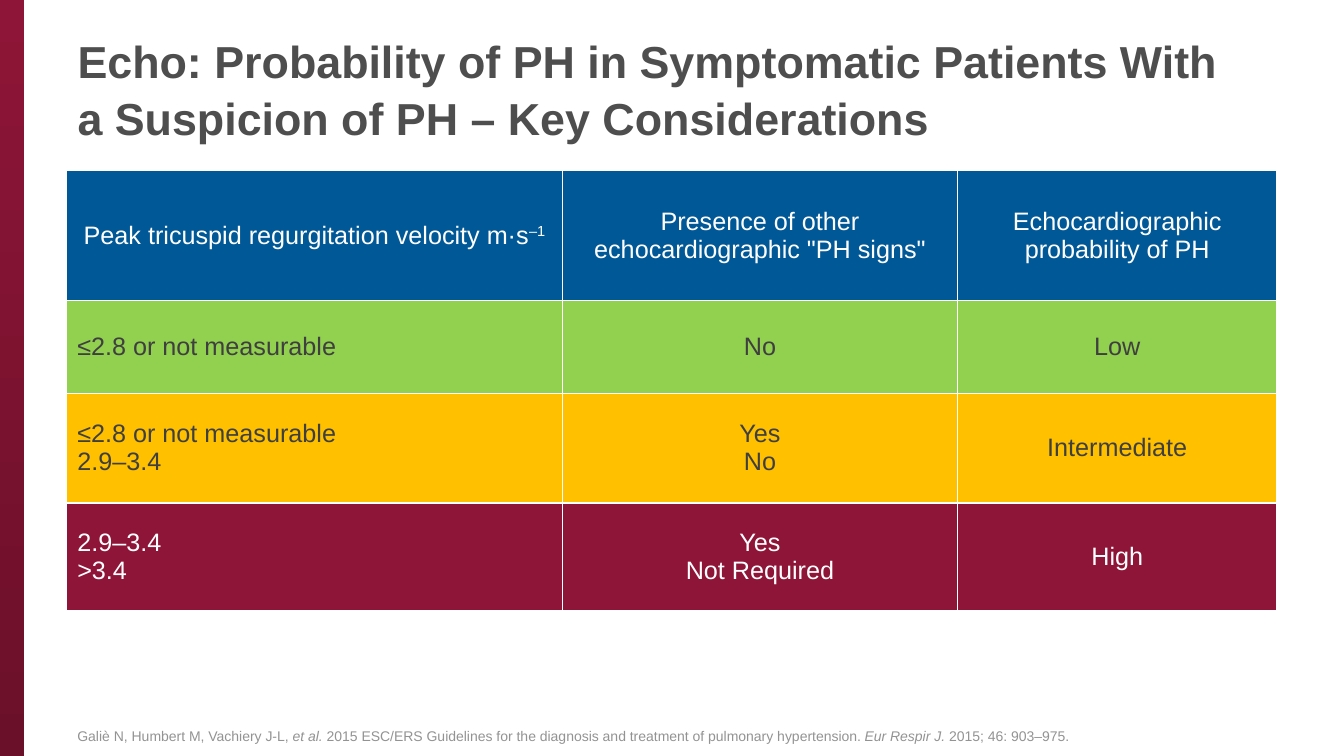
from dataclasses import dataclass

from lxml import etree
from pptx import Presentation
from pptx.dml.color import RGBColor
from pptx.enum.shapes import MSO_SHAPE
from pptx.enum.text import MSO_ANCHOR, MSO_AUTO_SIZE, PP_ALIGN
from pptx.oxml.ns import qn
from pptx.util import Pt

RECTANGLE = MSO_SHAPE.RECTANGLE
MIDDLE, BOTTOM = MSO_ANCHOR.MIDDLE, MSO_ANCHOR.BOTTOM
LEFT, CENTER = PP_ALIGN.LEFT, PP_ALIGN.CENTER
NO_AUTOFIT = MSO_AUTO_SIZE.NONE
TITLE_ONLY = 5


@dataclass(frozen=True)
class Theme:
    font: str = "Arial"
    title_size: float = 32
    table_size: float = 18
    source_size: float = 10
    title: str = "4D4E4D"
    dark: str = "3F3F3F"
    white: str = "FFFFFF"
    source: str = "939393"
    blue: str = "005897"
    green: str = "92D050"
    amber: str = "FFC000"
    crimson: str = "8E1537"
    deep_crimson: str = "6B1029"


THEME = Theme()

TITLE = "Echo: Probability of PH in Symptomatic Patients With a Suspicion of PH – Key Considerations"
COLUMN_WIDTHS = [354.24, 282.24, 228.24]
TABLE_ROWS = [
    (92.9, THEME.blue, THEME.white, [
        ["Peak tricuspid regurgitation velocity m·s"],
        ["Presence of other", 'echocardiographic "PH signs"'],
        ["Echocardiographic", "probability of PH"],
    ]),
    (66.3, THEME.green, THEME.dark, [["≤2.8 or not measurable"], ["No"], ["Low"]]),
    (78.4, THEME.amber, THEME.dark, [
        ["≤2.8 or not measurable", "2.9–3.4"], ["Yes", "No"], ["Intermediate"],
    ]),
    (77, THEME.crimson, THEME.white, [
        ["2.9–3.4", ">3.4"], ["Yes", "Not Required"], ["High"],
    ]),
]
SOURCE_SPANS = [
    ("Galiè N, Humbert M, Vachiery J-L, ", False),
    ("et al. ", True),
    ("2015 ESC/ERS Guidelines for the diagnosis and treatment of pulmonary hypertension. ", False),
    ("Eur Respir J. ", True),
    ("2015; 46: 903–975.", False),
]


def place(shape, box):
    shape.left, shape.top, shape.width, shape.height = [Pt(length) for length in box]


def add_span(para, text, size, color, bold=False, italic=False):
    span = para.add_run()
    span.text = text
    span.font.name = THEME.font
    span.font.size = Pt(size)
    span.font.color.rgb = RGBColor.from_string(color)
    span.font.bold = bold
    span.font.italic = italic
    return span


def add_side_bar(page, box):
    bar = page.shapes.add_shape(RECTANGLE, *[Pt(length) for length in box])
    bar.shadow.inherit = False
    bar.line.fill.background()
    bar.fill.gradient()
    bar.fill.gradient_angle = 270
    for stop, color in zip(bar.fill.gradient_stops, (THEME.crimson, THEME.deep_crimson)):
        stop.color.rgb = RGBColor.from_string(color)


def fill_title(page, box):
    title = page.shapes.title
    place(title, box)
    frame = title.text_frame
    frame.auto_size = NO_AUTOFIT
    frame.word_wrap = True
    frame.vertical_anchor = MIDDLE
    para = frame.paragraphs[0]
    para.alignment = LEFT
    para.line_spacing = 1.05
    add_span(para, TITLE, THEME.title_size, THEME.title, bold=True)


def set_borders(cell, color, width):
    properties = cell._tc.get_or_add_tcPr()
    for index, side in enumerate(("a:lnL", "a:lnR", "a:lnT", "a:lnB")):
        line = etree.Element(qn(side), w=str(Pt(width)))
        solid = etree.SubElement(line, qn("a:solidFill"))
        etree.SubElement(solid, qn("a:srgbClr"), val=color)
        properties.insert(index, line)


def fill_cell(cell, lines, fill, color, alignment):
    cell.fill.solid()
    cell.fill.fore_color.rgb = RGBColor.from_string(fill)
    set_borders(cell, THEME.white, 1)
    cell.vertical_anchor = MIDDLE
    cell.margin_left = cell.margin_right = Pt(7.7)
    cell.margin_top = cell.margin_bottom = Pt(3.6)
    frame = cell.text_frame
    for index, text in enumerate(lines):
        para = frame.add_paragraph() if index else frame.paragraphs[0]
        para.alignment = alignment
        add_span(para, text, THEME.table_size, color)


def add_probability_table(page, left, top):
    height = sum(row[0] for row in TABLE_ROWS)
    table = page.shapes.add_table(
        len(TABLE_ROWS), len(COLUMN_WIDTHS),
        Pt(left), Pt(top), Pt(sum(COLUMN_WIDTHS)), Pt(height),
    ).table
    for column, width in zip(table.columns, COLUMN_WIDTHS):
        column.width = Pt(width)
    for row_index, (row_height, fill, color, texts) in enumerate(TABLE_ROWS):
        table.rows[row_index].height = Pt(row_height)
        for column_index, lines in enumerate(texts):
            alignment = LEFT if row_index and not column_index else CENTER
            fill_cell(table.cell(row_index, column_index), lines, fill, color, alignment)
    unit = table.cell(0, 0).text_frame.paragraphs[0]
    exponent = add_span(unit, "–1", THEME.table_size, THEME.white)
    exponent._r.get_or_add_rPr().set("baseline", "30000")


def add_source(page, box):
    frame = page.shapes.add_textbox(*[Pt(length) for length in box]).text_frame
    frame.word_wrap = True
    frame.vertical_anchor = BOTTOM
    para = frame.paragraphs[0]
    for text, italic in SOURCE_SPANS:
        add_span(para, text, THEME.source_size, THEME.source, italic=italic)


def main():
    deck = Presentation()
    deck.slide_width, deck.slide_height = Pt(960), Pt(540)
    page = deck.slides.add_slide(deck.slide_layouts[TITLE_ONLY])
    add_side_bar(page, (0, 0, 17.3, 540))
    fill_title(page, (48.2, 15.8, 846, 93.6))
    add_probability_table(page, 47.5, 121.7)
    add_source(page, (48.2, 500.4, 846, 34.6))
    deck.save("out.pptx")


if __name__ == "__main__":
    main()
